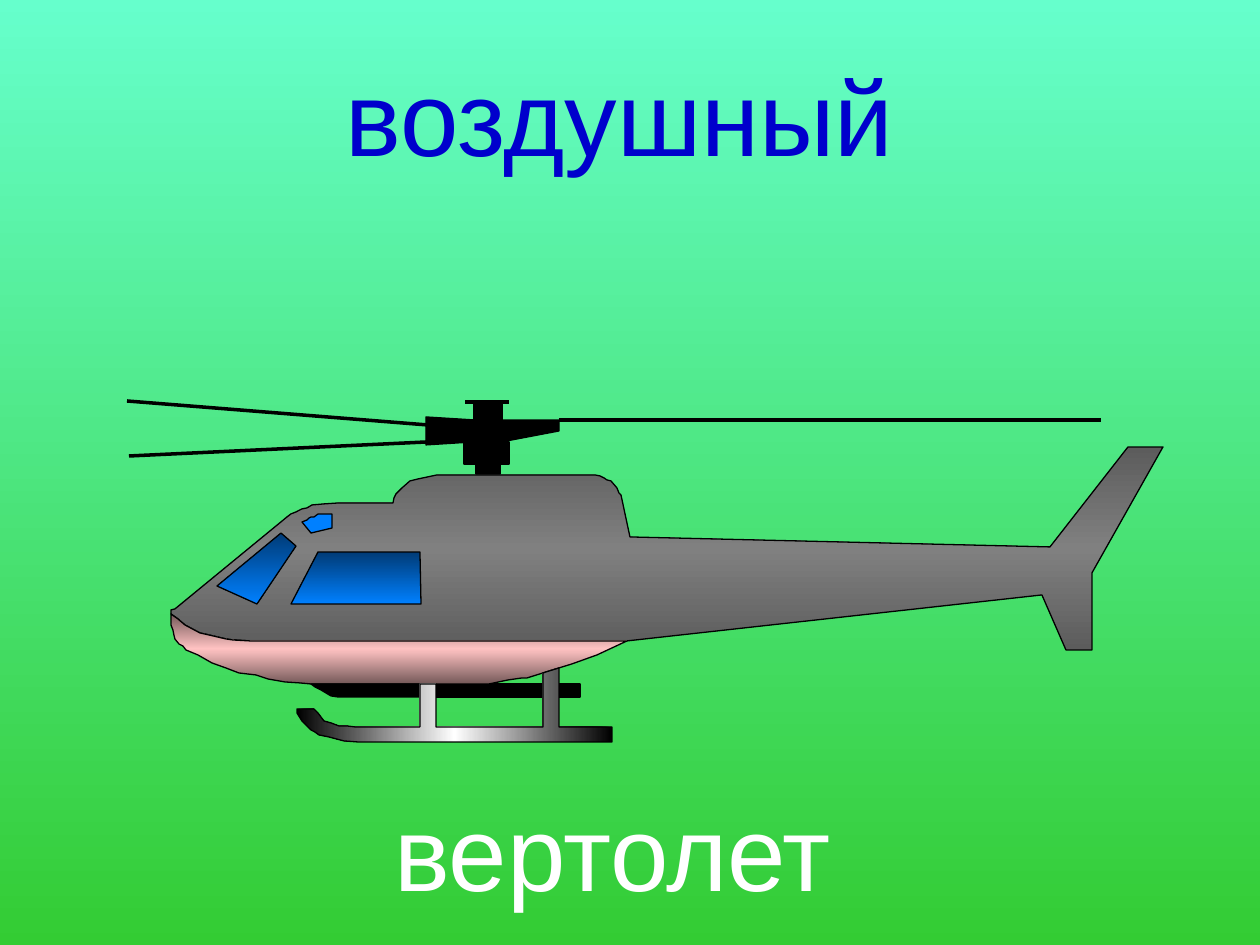
from copy import deepcopy
from dataclasses import dataclass
from typing import Any

from lxml.etree import SubElement
from pptx import Presentation
from pptx.dml.color import RGBColor
from pptx.enum.shapes import MSO_CONNECTOR as Conn, MSO_SHAPE as Shape
from pptx.enum.text import MSO_ANCHOR as Anchor, PP_ALIGN as Align
from pptx.oxml.ns import qn
from pptx.util import Pt

SCALE = 914400 / 126

BLACK = RGBColor(0x00, 0x00, 0x00)
WHITE = RGBColor(0xFF, 0xFF, 0xFF)
NAVY = RGBColor(0x00, 0x00, 0xCC)
MINT = RGBColor(0x66, 0xFF, 0xCC)
GREEN = RGBColor(0x33, 0xCC, 0x33)
GREY = RGBColor(0x80, 0x80, 0x80)
DARK_GREY = RGBColor(0x5C, 0x5C, 0x5C)
PINK = RGBColor(0xFF, 0xC2, 0xC2)
DARK_PINK = RGBColor(0x76, 0x5A, 0x5A)
BLUE = RGBColor(0x00, 0x80, 0xFF)
DARK_BLUE = RGBColor(0x00, 0x3B, 0x76)

Points = list[tuple[int, int]]


@dataclass(frozen=True)
class Paint:
    colors: tuple[RGBColor, ...]
    angle: int = 270


@dataclass(frozen=True)
class Rod:
    x1: int
    y1: int
    x2: int
    y2: int


@dataclass(frozen=True)
class Block:
    x: int
    y: int
    w: int
    h: int


@dataclass(frozen=True)
class Panel:
    points: Points
    paint: Paint


@dataclass(frozen=True)
class Label:
    text: str
    box: Block
    color: RGBColor
    align: Align
    anchor: Anchor
    before: int


SOLID_BLACK = Paint((BLACK,))
METAL = Paint((DARK_GREY, GREY, DARK_GREY))
BELLY_PINK = Paint((DARK_PINK, PINK, DARK_PINK))
CHROME = Paint((BLACK, WHITE, BLACK), 0)
GLASS = Paint((DARK_BLUE, BLUE))
SKY = Paint((MINT, GREEN))

SEAM = [(171, 614), (178, 619), (185, 625), (200, 633), (209, 635),
        (226, 639), (233, 640), (251, 641), (627, 641)]
HUB_LEFT = [(426, 445), (426, 417), (474, 420), (474, 442)]
HUB_RIGHT = [(501, 420), (559, 420), (559, 431), (501, 442)]
FUSELAGE = [
    (1042, 595), (1066, 650), (1092, 650), (1092, 573), (1163, 447),
    (1128, 447), (1050, 547), (630, 537), (621, 495), (619, 493), (617, 488),
    (611, 481), (607, 480), (604, 478), (600, 476), (595, 475), (437, 475),
    (418, 479), (410, 481), (402, 488), (396, 494), (394, 498), (393, 503),
    (339, 503), (324, 504), (312, 505), (307, 508), (302, 509), (296, 512),
    (291, 514), (287, 517), (281, 522), (175, 609), (171, 610), *SEAM]
BELLY = [
    (572, 664), (559, 668), (543, 673), (527, 678), (522, 678), (508, 680),
    (489, 684), (311, 684), (300, 683), (285, 682), (268, 679), (256, 675),
    (239, 673), (226, 668), (212, 663), (198, 655), (186, 650), (183, 646),
    (179, 644), (175, 639), (174, 635), (173, 630), (171, 625), *SEAM,
    (597, 655)]
FAR_SKID = [(420, 684), (420, 697), (338, 697), (331, 696), (326, 693),
            (321, 690), (315, 687), (311, 684)]
NEAR_SKID = [
    (543, 673), (543, 727), (436, 727), (436, 684), (420, 684), (420, 727),
    (355, 727), (347, 726), (339, 726), (331, 723), (324, 721), (321, 717),
    (318, 713), (314, 709), (297, 709), (297, 713), (302, 721), (311, 730),
    (315, 732), (319, 735), (329, 737), (344, 741), (358, 742), (612, 742),
    (612, 727), (559, 727), (559, 668)]
WINDSHIELD = [(296, 546), (281, 533), (217, 586), (257, 604)]
SIDE_WINDOW = [(291, 604), (421, 604), (420, 552), (318, 552)]
TOP_WINDOW = [(332, 514), (318, 514), (314, 517), (311, 517), (309, 518),
              (307, 520), (302, 522), (311, 533), (332, 528)]

HELICOPTER = [
    Rod(127, 401, 428, 425),
    Rod(129, 456, 426, 442),
    Panel(HUB_LEFT, SOLID_BLACK),
    Block(474, 402, 28, 40),
    Rod(509, 402, 465, 402),
    Panel(HUB_RIGHT, SOLID_BLACK),
    Rod(559, 420, 1101, 420),
    Block(464, 442, 45, 22),
    Block(476, 464, 24, 10),
    Panel(FUSELAGE, METAL),
    Block(436, 684, 108, 13),
    Block(559, 684, 21, 13),
    Panel(BELLY, BELLY_PINK),
    Panel(FAR_SKID, SOLID_BLACK),
    Panel(NEAR_SKID, CHROME),
    Panel(WINDSHIELD, GLASS),
    Panel(SIDE_WINDOW, GLASS),
    Panel(TOP_WINDOW, Paint((BLUE,))),
]

LABELS = [
    Label("вертолет", Block(382, 780, 507, 111), WHITE, Align.LEFT, Anchor.TOP, 6),
    Label("воздушный", Block(84, 35, 1071, 158), NAVY, Align.CENTER, Anchor.MIDDLE, 0),
]


def px(*values: int) -> list[int]:
    return [round(v * SCALE) for v in values]


def apply_paint(fill: Any, element: Any, paint: Paint) -> None:
    if len(paint.colors) == 1:
        fill.solid()
        fill.fore_color.rgb = paint.colors[0]
        return
    fill.gradient()
    fill.gradient_angle = paint.angle
    stops = element.find(".//" + qn("a:gsLst"))
    for _ in paint.colors[2:]:
        stops.append(deepcopy(stops[0]))
    last = len(paint.colors) - 1
    for i, (stop, color) in enumerate(zip(fill.gradient_stops, paint.colors)):
        stop.color.rgb = color
        stop.position = i / last


def outline(sp: Any) -> None:
    sp.line.color.rgb = BLACK
    sp.line.width = 0


def draw_part(shapes: Any, part: Rod | Block | Panel) -> None:
    if isinstance(part, Rod):
        sp = shapes.add_connector(Conn.STRAIGHT, *px(part.x1, part.y1, part.x2, part.y2))
        outline(sp)
        SubElement(sp.element.spPr, qn("a:effectLst"))
        return
    if isinstance(part, Block):
        sp = shapes.add_shape(Shape.RECTANGLE, *px(part.x, part.y, part.w, part.h))
        paint = SOLID_BLACK
    else:
        builder = shapes.build_freeform(*part.points[0], scale=SCALE)
        builder.add_line_segments(part.points[1:], close=True)
        sp = builder.convert_to_shape()
        paint = part.paint
    sp.shadow.inherit = False
    apply_paint(sp.fill, sp.element, paint)
    outline(sp)


def draw_label(shapes: Any, label: Label) -> None:
    box = label.box
    tf = shapes.add_textbox(*px(box.x, box.y, box.w, box.h)).text_frame
    tf.word_wrap = True
    tf.vertical_anchor = label.anchor
    p = tf.paragraphs[0]
    p.text = label.text
    p.alignment = label.align
    p.space_before = Pt(label.before)
    font = p.runs[0].font
    font.name, font.size = "Arial", Pt(60)
    font.color.rgb = label.color


def main() -> None:
    prs = Presentation()
    prs.slide_width, prs.slide_height = px(1260, 945)
    s = prs.slides.add_slide(prs.slide_layouts[6])
    apply_paint(s.background.fill, s.element, SKY)
    for label in LABELS:
        draw_label(s.shapes, label)
    group = s.shapes.add_group_shape()
    for part in HELICOPTER:
        draw_part(group.shapes, part)
    prs.save("out.pptx")


if __name__ == "__main__":
    main()
